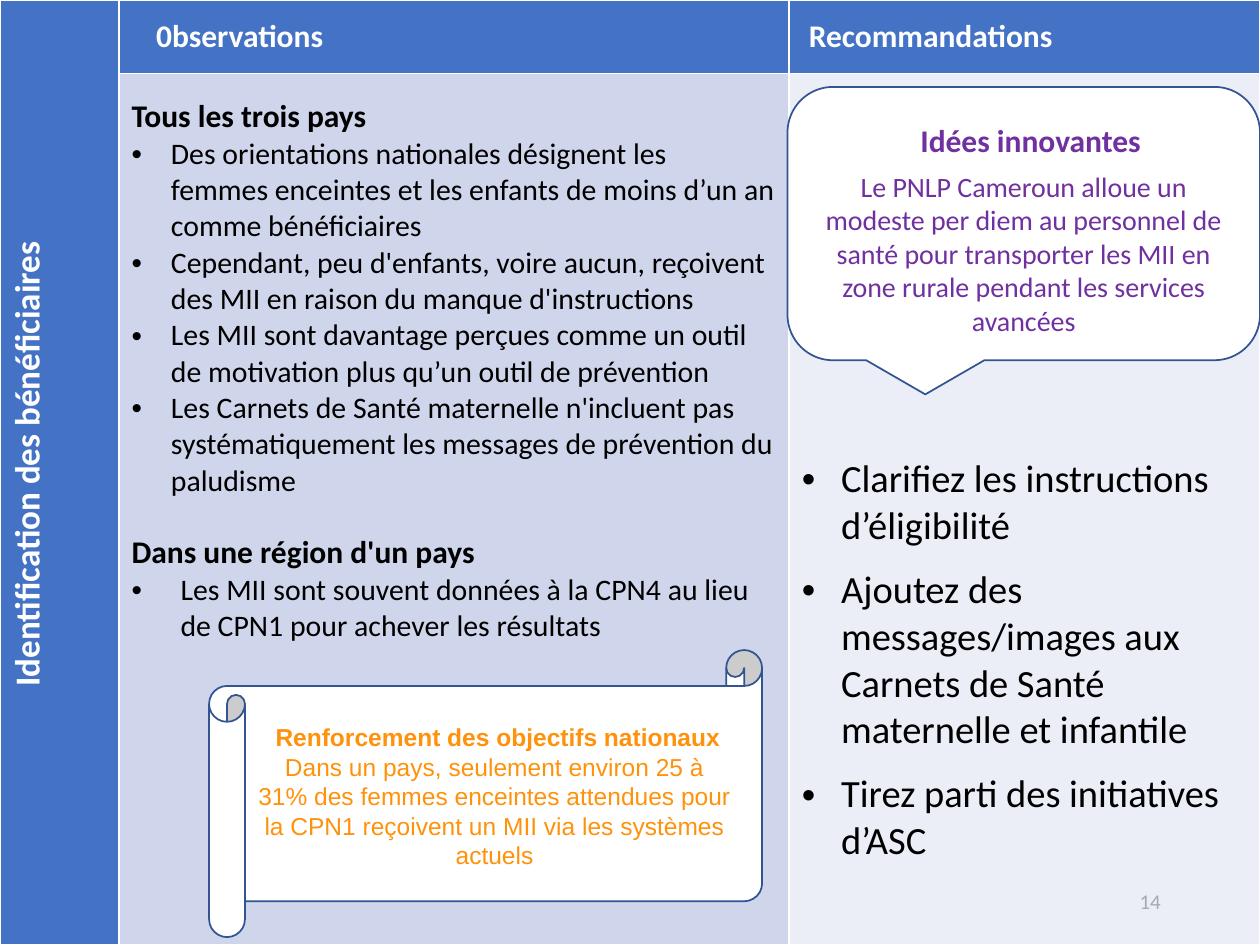
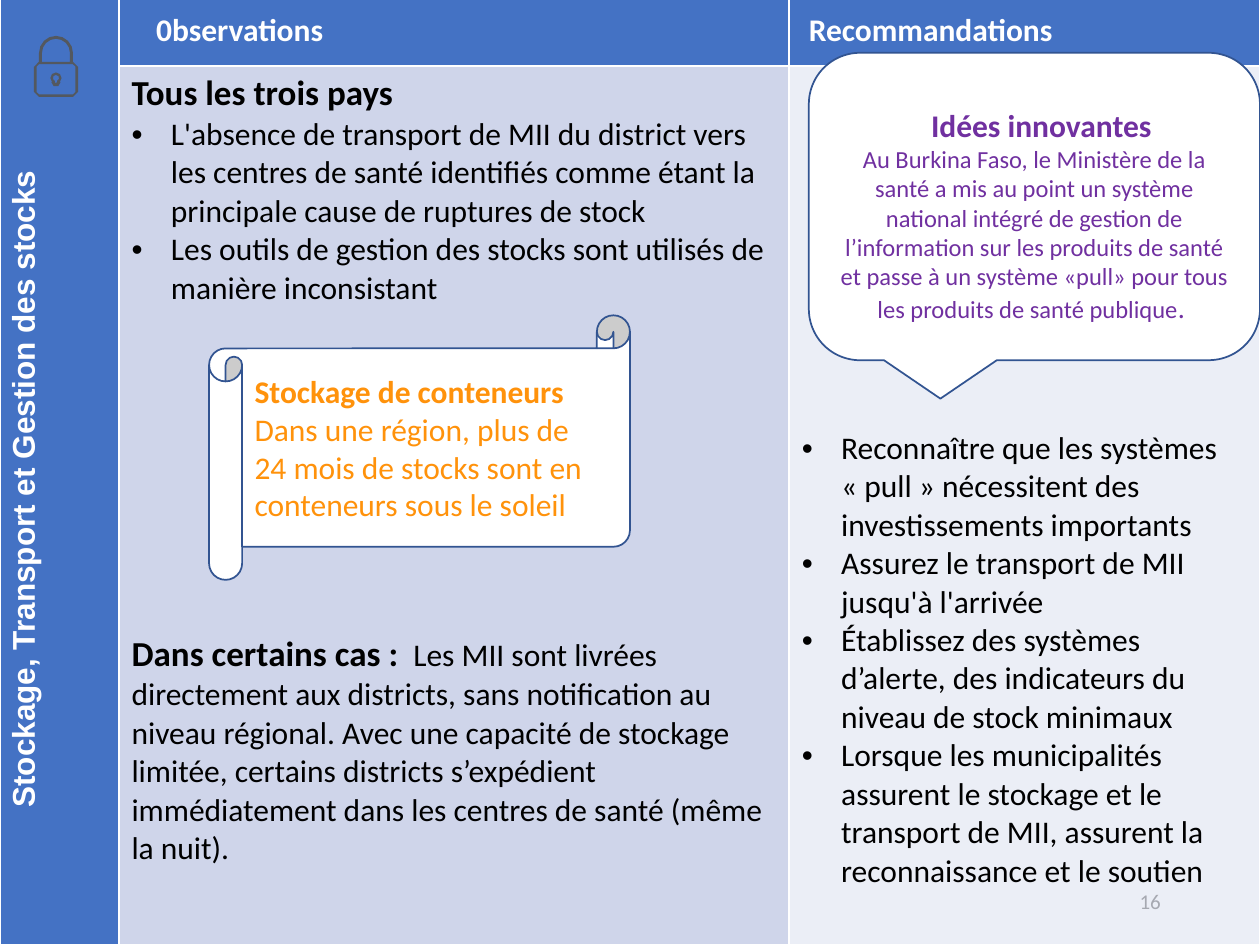
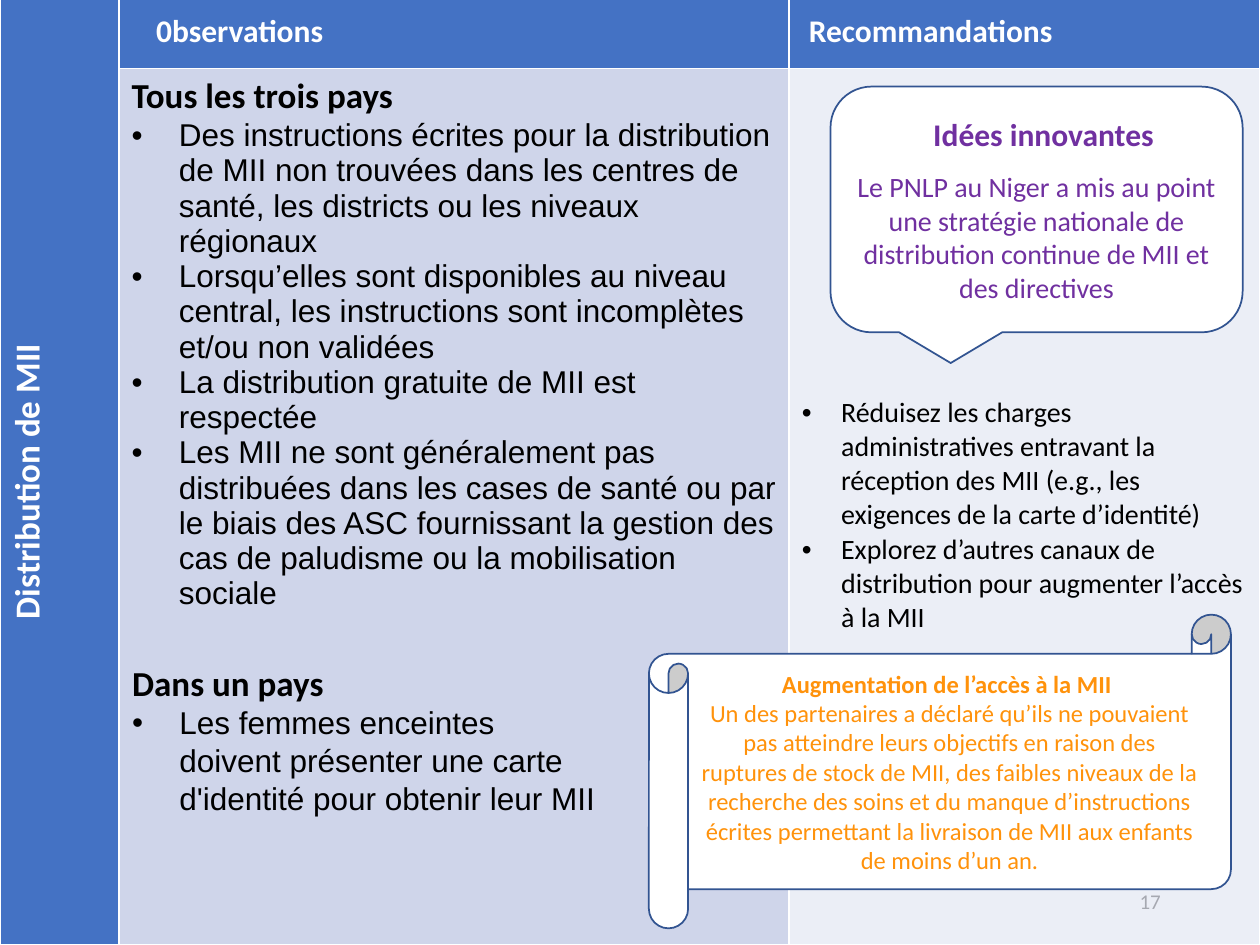
from math import cos, radians, sin
from pptx import Presentation
from pptx.dml.color import RGBColor
from pptx.enum.shapes import MSO_SHAPE
from pptx.enum.text import MSO_ANCHOR, PP_ALIGN
from pptx.oxml.ns import qn
from pptx.util import Pt
from lxml.etree import SubElement

THEME = {
    "color": {"band": "4472C4", "body": "CFD5EA", "white": "FFFFFF", "black": "000000",
              "edge": "325491", "idea": "7030A0", "note": "FF920B", "page": "8C8C8C",
              "lock": "53585F"},
    "text": {
        "side": {"size": 20, "bold": True, "color": "white"},
        "band": {"size": 18, "bold": True, "color": "white"},
        "head": {"size": 20, "bold": True, "color": "black"},
        "item": {"size": 18, "bold": False, "color": "black", "hang": 22.5},
        "plain": {"size": 18, "bold": False, "color": "black"},
        "idea": {"size": 18, "bold": True, "color": "idea", "align": "mid", "left": 8},
        "tale": {"size": 16, "bold": False, "color": "idea", "align": "mid"},
        "note": {"size": 14, "bold": True, "color": "note", "align": "mid"},
        "fact": {"size": 14, "bold": False, "color": "note", "align": "mid"},
        "page": {"size": 12, "bold": False, "color": "page", "align": "right"},
    },
    "font": "Calibri",
}
ALIGN = {"left": PP_ALIGN.LEFT, "mid": PP_ALIGN.CENTER, "right": PP_ALIGN.RIGHT}
COLS = (68, 383, 269)
WIDE, HIGH = 720, 540
PAGE = (508.4, 500.4, 162, 28.8)
IDEA = "Idées innovantes"
ALL = "Tous les trois pays"
ARIAL = {"name": "Arial"}
LONG = {"name": "Arial", "hang": 27}
LEFT = {"size": 18, "align": "left"}

SLIDES = [
    {
        "page": "14", "top": 0, "band": 42,
        "side": ("Identification des bénéficiaires", {"left": 140.4}),
        "seen": (13.6, [
            ("head", ALL, {"size": 18}),
            ("item", "Des orientations nationales désignent les\nfemmes enceintes et les enfants de moins d’un an comme bénéficiaires", {"size": 17}),
            ("item", "Cependant, peu d'enfants, voire aucun, reçoivent des MII en raison du manque d'instructions", {"size": 17}),
            ("item", "Les MII sont davantage perçues comme un outil de motivation plus qu’un outil de prévention", {"size": 17}),
            ("item", "Les Carnets de Santé maternelle n'incluent pas systématiquement les messages de prévention du paludisme", {"size": 17}),
            ("head", "Dans une région d'un pays", {"size": 18, "gap": 19.5}),
            ("item", "Les MII sont souvent données à la CPN4 au lieu de CPN1 pour achever les résultats", {"size": 17, "hang": 28}),
        ]),
        "todo": (218.6, [
            ("item", "Clarifiez les instructions d’éligibilité", {"size": 22}),
            ("item", "Ajoutez des messages/images aux Carnets de Santé maternelle et infantile", {"size": 22, "gap": 9.8}),
            ("item", "Tirez parti des initiatives d’ASC", {"size": 22, "gap": 9.8}),
        ]),
        "call": ((450, 49.7, 270, 156.2), [
            ("idea", IDEA, {}),
            ("tale", "Le PNLP Cameroun alloue un modeste per diem au personnel de santé pour transporter les MII en zone rurale pendant les services avancées", {"gap": 6}),
        ], 6),
        "roll": ((119.5, 371.5, 316, 164), [
            ("note", "Renforcement des objectifs nationaux", {"name": "Arial", "left": 4}),
            ("fact", "Dans un pays, seulement environ 25 à 31% des femmes enceintes attendues pour la CPN1 reçoivent un MII via les systèmes actuels", ARIAL),
        ], 2.6),
    },
    {
        "page": "16", "top": -2.9, "band": 40.7,
        "side": ("Stockage, Transport et Gestion des stocks",
                 {"left": 71.3, "size": 18, "name": "Arial"}),
        "seen": (3.6, [
            ("head", ALL, {}),
            ("item", "L'absence de transport de MII du district vers les centres de santé identifiés comme étant la principale cause de ruptures de stock", {}),
            ("item", "Les outils de gestion des stocks sont utilisés de manière inconsistant", {}),
            ("plain", [
                ("Dans certains cas : ", {"size": 20, "bold": True}),
                (" Les MII sont livrées directement aux districts, sans notification au niveau régional. Avec une capacité de stockage limitée, certains districts s’expédient immédiatement dans les centres de santé (même la nuit).", {}),
            ], {"gap": 186}),
        ]),
        "todo": (207.5, [
            ("item", "Reconnaître que les systèmes\n« pull » nécessitent des investissements importants", {}),
            ("item", "Assurez le transport de MII jusqu'à l'arrivée", {}),
            ("item", "Établissez des systèmes d’alerte, des indicateurs du niveau de stock minimaux", {}),
            ("item", "Lorsque les municipalités assurent le stockage et le transport de MII, assurent la reconnaissance et le soutien", {}),
        ]),
        "call": ((462.2, 30.2, 257.8, 175.7), [
            ("idea", IDEA, {}),
            ("tale", [
                ("Au Burkina Faso, le Ministère de la santé a mis au point un système national intégré de gestion de l’information sur les produits de santé et passe à un système «pull» pour tous les produits de santé publique", {"size": 14}),
                (". ", {}),
            ], {}),
        ], 9.8),
        "roll": ((119.5, 180.2, 240.5, 151.2), [
            ("note", "Stockage de conteneurs", LEFT),
            ("fact", "Dans une région, plus de 24 mois de stocks sont en conteneurs sous le soleil", LEFT),
        ]),
        "lock": True,
    },
    {
        "page": "17", "top": -2.9, "band": 42.2,
        "side": ("Distribution de MII", {"left": 179}),
        "seen": (3.6, [
            ("head", ALL, {}),
            ("item", "Des instructions écrites pour la distribution de MII non trouvées dans les centres de santé, les districts ou les niveaux régionaux", LONG),
            ("item", "Lorsqu’elles sont disponibles au niveau central, les instructions sont incomplètes et/ou non validées", LONG),
            ("item", "La distribution gratuite de MII est respectée", LONG),
            ("item", "Les MII ne sont généralement pas distribuées dans les cases de santé ou par le biais des ASC fournissant la gestion des cas de paludisme ou la mobilisation sociale", LONG),
        ]),
        "todo": (186.7, [
            ("item", "Réduisez les charges administratives entravant la réception des MII (e.g., les exigences de la carte d’identité)", {"size": 16}),
            ("item", "Explorez d’autres canaux de distribution pour augmenter l’accès à la MII", {"size": 16}),
        ]),
        "call": ((474.6, 49.5, 235.5, 140.4), [
            ("idea", IDEA, {}),
            ("tale", "Le PNLP au Niger a mis au point une stratégie nationale de distribution continue de MII et des directives", {"gap": 9.8}),
        ]),
        "roll": ((370.8, 351.2, 332.6, 179.3), [
            ("note", "Augmentation de l’accès à la MII ", {}),
            ("fact", "Un des partenaires a déclaré qu’ils ne pouvaient pas atteindre leurs objectifs en raison des ruptures de stock de MII, des faibles niveaux de la recherche des soins et du manque d’instructions écrites permettant la livraison de MII aux enfants de moins d’un an.", {}),
        ]),
        "box": ((68.4, 374.4, 280, 118.8), [
            ("head", "Dans un pays", {}),
            ("item", "Les femmes enceintes doivent présenter une carte d'identité pour obtenir leur MII", LONG),
        ]),
    },
]


def tint(name):
    return RGBColor.from_string(THEME["color"][name])


def points(spot):
    return [Pt(v) for v in spot]


def dress(run, fmt):
    font = run.font
    look = {"name": fmt.get("name", THEME["font"]), "size": Pt(fmt["size"]), "bold": fmt["bold"]}
    for key, val in look.items():
        setattr(font, key, val)
    font.color.rgb = tint(fmt["color"])


def write(frame, paras):
    for num, (style, text, more) in enumerate(paras):
        para = frame.add_paragraph() if num else frame.paragraphs[0]
        fmt = {**THEME["text"][style], **more}
        para.alignment = ALIGN[fmt.get("align", "left")]
        if "gap" in fmt:
            para.space_before = Pt(fmt["gap"])
        prop = para._p.get_or_add_pPr()
        hang = fmt.get("hang", 0)
        prop.set("marL", str(Pt(hang or fmt.get("left", 0))))
        prop.set("indent", str(-Pt(hang)))
        if hang:
            SubElement(prop, qn("a:buFont")).set("typeface", "Arial")
            SubElement(prop, qn("a:buChar")).set("char", "•")
        else:
            SubElement(prop, qn("a:buNone"))
        for part, extra in [(text, {})] if isinstance(text, str) else text:
            for row, line in enumerate(part.split("\n")):
                if row:
                    para.add_line_break()
                run = para.add_run()
                run.text = line
                dress(run, {**fmt, **extra})


def edge(cell):
    prop = cell._tc.get_or_add_tcPr()
    for num, side in enumerate(("lnL", "lnR", "lnT", "lnB")):
        line = SubElement(prop, qn("a:" + side))
        line.set("w", str(Pt(1)))
        fill = SubElement(line, qn("a:solidFill"))
        SubElement(fill, qn("a:srgbClr")).set("val", THEME["color"]["white"])
        prop.insert(num, line)


def fill_cell(cell, hue, paras, top=None, clear=None):
    cell.fill.solid()
    cell.fill.fore_color.rgb = tint(hue)
    prop = cell._tc.get_or_add_tcPr()
    if clear:
        code = prop.find(qn("a:solidFill")).find(qn("a:srgbClr"))
        SubElement(code, qn("a:alpha")).set("val", str(clear * 1000))
    edge(cell)
    if top is None:
        cell.vertical_anchor = MSO_ANCHOR.MIDDLE
    else:
        cell.margin_top = Pt(top)
    write(cell.text_frame, paras)


def add_grid(slide, data):
    top, band = data["top"], data["band"]
    grid = slide.shapes.add_table(2, 3, *points((0, top, WIDE, HIGH - top))).table
    for col, wide in zip(grid.columns, COLS):
        col.width = Pt(wide)
    for row, high in zip(grid.rows, (band, HIGH - top - band)):
        row.height = Pt(high)
    side = grid.cell(0, 0)
    side.merge(grid.cell(1, 0))
    fill_cell(side, "band", [("side", *data["side"])])
    side._tc.get_or_add_tcPr().set("vert", "vert270")
    fill_cell(grid.cell(0, 1), "band", [("band", "0bservations", {"left": 14})])
    fill_cell(grid.cell(0, 2), "band", [("band", "Recommandations", {"left": 4})])
    for col, key, clear in ((1, "seen", None), (2, "todo", 40)):
        top, paras = data[key]
        fill_cell(grid.cell(1, col), "body", paras, top, clear)


def add_form(slide, kind, spot, paras, pad=0):
    form = slide.shapes.add_shape(kind, *points(spot))
    form.shadow.inherit = False
    form.fill.solid()
    form.fill.fore_color.rgb = tint("white")
    form.line.color.rgb = tint("edge")
    form.line.width = Pt(1)
    frame = form.text_frame
    look = {"word_wrap": True, "vertical_anchor": MSO_ANCHOR.MIDDLE, "margin_top": Pt(3.6 + pad)}
    for key, val in look.items():
        setattr(frame, key, val)
    write(frame, paras)


def add_text(slide, spot, paras, anchor=MSO_ANCHOR.TOP):
    frame = slide.shapes.add_textbox(*points(spot)).text_frame
    frame.word_wrap = True
    frame.vertical_anchor = anchor
    write(frame, paras)


def arc(x, y, size, start, end, steps):
    turns = [radians(start + (end - start) * n / steps) for n in range(steps + 1)]
    return [(x + size * cos(t), y + size * sin(t)) for t in turns]


def round_box(left, top, right, base, bend):
    return (arc(right - bend, top + bend, bend, 270, 360, 1)
            + arc(right - bend, base - bend, bend, 0, 90, 1)
            + arc(left + bend, base - bend, bend, 90, 180, 1)
            + arc(left + bend, top + bend, bend, 180, 270, 1))


def add_lock(slide):
    mid, bow, key = 32, 30.2, 44.6
    rings = [
        arc(mid, bow, 9.7, 180, 360, 8) + round_box(19.4, 35.3, 44.6, 55.4, 2.9),
        round_box(20.9, 36.7, 43.1, 54, 1.4),
        arc(mid, bow, 8, 180, 360, 8) + [(mid + 8, 35.3), (mid - 8, 35.3)],
        arc(mid, key, 3.2, 135, 405, 6) + arc(mid, 47, 2.6, 0, 180, 3),
        arc(mid, key, 1.8, 110, 430, 6) + arc(mid, 46.9, 0.7, 0, 180, 2),
    ]
    pen = None
    for ring in rings:
        first, *rest = [points(dot) for dot in ring]
        if pen:
            pen.move_to(*first)
        else:
            pen = slide.shapes.build_freeform(*first)
        pen.add_line_segments(rest, close=True)
    lock = pen.convert_to_shape()
    lock.shadow.inherit = False
    lock.fill.solid()
    lock.fill.fore_color.rgb = tint("lock")
    lock.line.fill.background()


def main():
    deck = Presentation()
    deck.slide_width, deck.slide_height = Pt(WIDE), Pt(HIGH)
    for data in SLIDES:
        slide = deck.slides.add_slide(deck.slide_layouts[6])
        add_text(slide, PAGE, [("page", data["page"], {})], MSO_ANCHOR.MIDDLE)
        add_grid(slide, data)
        add_form(slide, MSO_SHAPE.ROUNDED_RECTANGULAR_CALLOUT, *data["call"])
        add_form(slide, MSO_SHAPE.HORIZONTAL_SCROLL, *data["roll"])
        if "lock" in data:
            add_lock(slide)
        if "box" in data:
            add_text(slide, *data["box"])
    deck.save("out.pptx")


if __name__ == "__main__":
    main()
